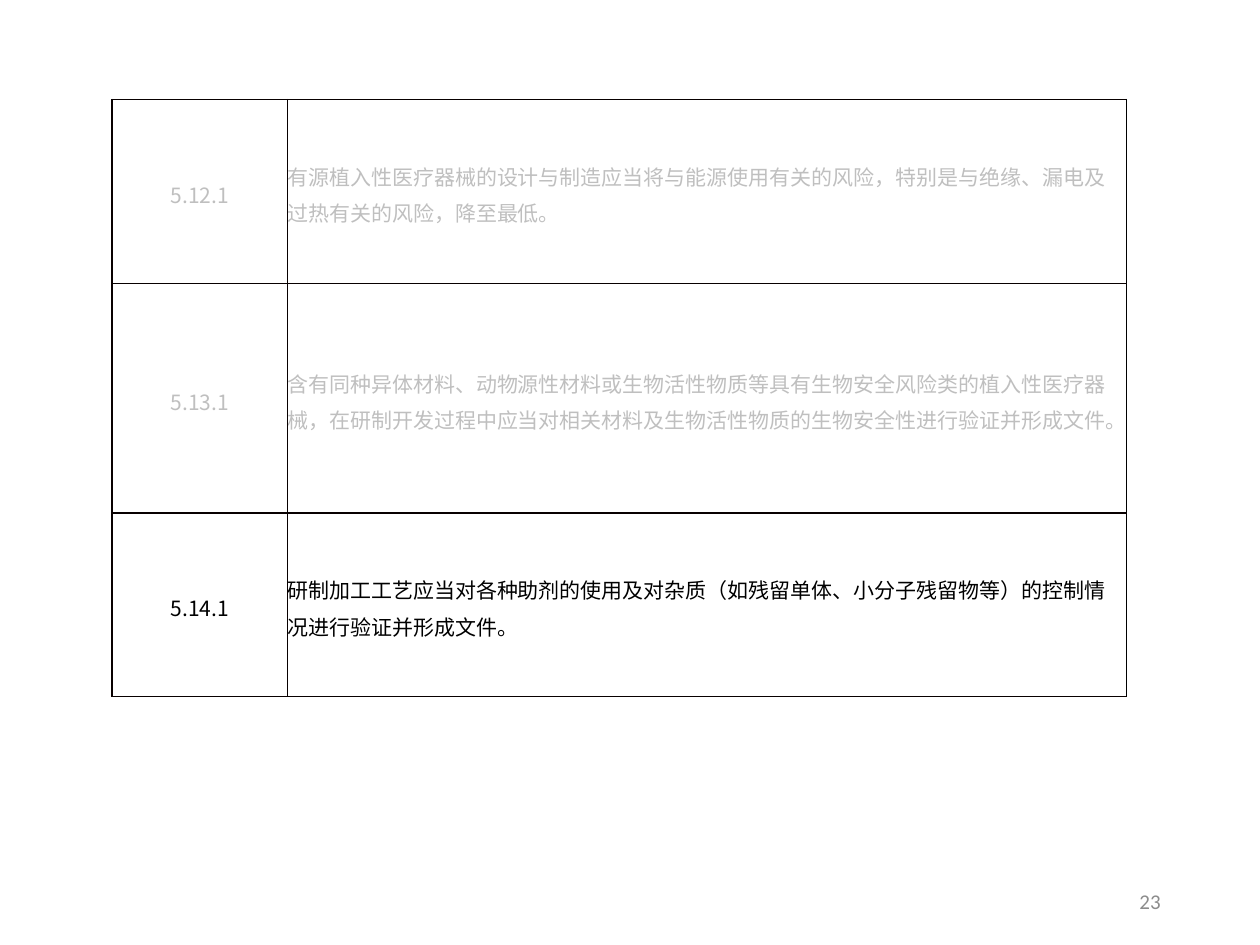
from lxml import etree
from pptx import Presentation
from pptx.dml.color import RGBColor
from pptx.enum.text import MSO_ANCHOR, PP_ALIGN
from pptx.oxml.ns import qn
from pptx.util import Inches, Pt

MIDDLE = MSO_ANCHOR.MIDDLE
LEFT, CENTER, RIGHT = PP_ALIGN.LEFT, PP_ALIGN.CENTER, PP_ALIGN.RIGHT
COLORS = {"border": "080000", "edge": "000000", "done": "BFBFBF",
          "current": "000000", "number": "8C8C8C"}
BODY_FONT, NUMBER_FONT = "Noto Sans CJK SC", "Calibri"
COLUMNS = (1.39, 6.66)
CLAUSES = [
    # clause, requirement, row height, colour
    ("5.12.1", "有源植入性医疗器械的设计与制造应当将与能源使用有关的风险，特别是与绝缘、漏电及过热有关的风险，降至最低。",
     1.46, "done"),
    ("5.13.1", "含有同种异体材料、动物源性材料或生物活性物质等具有生物安全风险类的植入性医疗器械，在研制开发过程中应当对相关材料及生物活性物质的生物安全性进行验证并形成文件。",
     1.82, "done"),
    ("5.14.1", "研制加工工艺应当对各种助剂的使用及对杂质（如残留单体、小分子残留物等）的控制情况进行验证并形成文件。",
     1.46, "current"),
]


def format_text(p, font, color, align):
    p.alignment = align
    for r in p.runs:
        r.font.size = Pt(12)
        r.font.name = font
        r.font.color.rgb = RGBColor.from_string(COLORS[color])
        etree.SubElement(r.font._element, qn("a:ea"), typeface=font)


def set_borders(cell, right, right_width):
    """Draw all four sides; only the right one varies."""
    tc_pr = cell._tc.get_or_add_tcPr()
    sides = [("L", "border", 1), ("R", right, right_width),
             ("T", "border", 1), ("B", "border", 1)]
    for i, (side, color, width) in enumerate(sides):
        line = etree.Element(qn(f"a:ln{side}"), w=str(Pt(width)))
        fill = etree.SubElement(line, qn("a:solidFill"))
        etree.SubElement(fill, qn("a:srgbClr"), val=COLORS[color])
        tc_pr.insert(i, line)


def fill_cell(cell, text, color, align):
    cell.fill.background()
    cell.vertical_anchor = MIDDLE
    cell.margin_left = cell.margin_right = cell.margin_top = cell.margin_bottom = 0
    cell.text_frame.text = text
    p = cell.text_frame.paragraphs[0]
    p.line_spacing = 1.2
    format_text(p, BODY_FONT, color, align)


def add_clause_table(s, left, top):
    height = sum(clause[2] for clause in CLAUSES)
    table = s.shapes.add_table(len(CLAUSES), len(COLUMNS), Inches(left), Inches(top),
                               Inches(sum(COLUMNS)), Inches(height)).table
    table.first_row = table.horz_banding = False
    for column, width in zip(table.columns, COLUMNS):
        column.width = Inches(width)
    for row, (number, requirement, row_height, color) in zip(table.rows, CLAUSES):
        row.height = Inches(row_height)
        number_cell, requirement_cell = row.cells
        fill_cell(number_cell, number, color, CENTER)
        set_borders(number_cell, "border", 1)
        fill_cell(requirement_cell, requirement, color, LEFT)
        set_borders(requirement_cell, "edge", 0.75)


def add_slide_number(s, number, left, top, width, height):
    sp = s.shapes.add_textbox(Inches(left), Inches(top), Inches(width), Inches(height))
    tf = sp.text_frame
    tf.word_wrap = True
    tf.vertical_anchor = MIDDLE
    tf.text = number
    format_text(tf.paragraphs[0], NUMBER_FONT, "number", RIGHT)


def main():
    prs = Presentation()
    prs.slide_width, prs.slide_height = Inches(10), Inches(7.5)
    s = prs.slides.add_slide(prs.slide_layouts[6])
    add_slide_number(s, "23", 7.06, 6.95, 2.25, 0.4)
    add_clause_table(s, 0.89, 0.79)
    prs.save("out.pptx")


if __name__ == "__main__":
    main()
